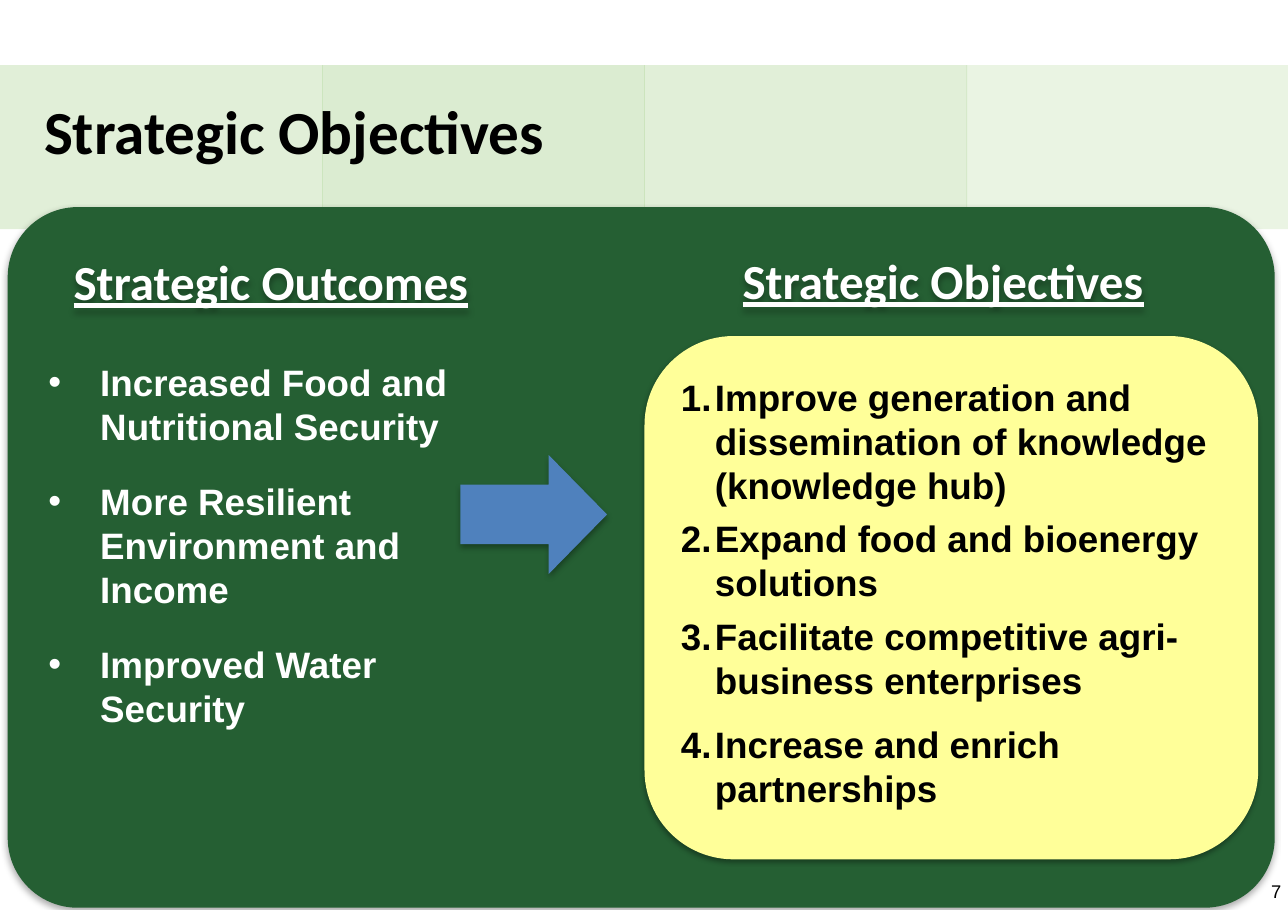
import pptx
import pptx.dml.color
import pptx.enum.shapes
import pptx.enum.text
import pptx.oxml.ns
import pptx.util
from lxml import etree

Inches = pptx.util.Inches
Pt = pptx.util.Pt
Shapes = pptx.enum.shapes.MSO_SHAPE
Align = pptx.enum.text.PP_ALIGN
Anchor = pptx.enum.text.MSO_ANCHOR
qn = pptx.oxml.ns.qn


def color(value):
    return pptx.dml.color.RGBColor.from_string(value)


def child(parent, tag, **attributes):
    return etree.SubElement(parent, qn(tag), {key: str(value) for key, value in attributes.items()})


def write(para, text, size=24, font="Arial", ink="000000", bold=True, underline=False,
          align=Align.LEFT, line=None, before=0, after=0, bullet=None, indent=0):
    para.alignment = align
    para.line_spacing = line
    para.space_before = Pt(before)
    para.space_after = Pt(after)
    if bullet:
        properties = para._p.get_or_add_pPr()
        properties.set("marL", str(Inches(indent)))
        properties.set("indent", str(-Inches(indent)))
        child(child(properties, "a:buClr"), "a:srgbClr", val=ink)
        child(properties, "a:buFont", typeface=font)
        if bullet == "number":
            child(properties, "a:buAutoNum", type="arabicPeriod")
        else:
            child(properties, "a:buChar", char=bullet)
    span = para.add_run()
    span.text = text
    span.font.size = Pt(size)
    span.font.name = font
    span.font.bold = bold
    span.font.underline = underline
    span.font.color.rgb = color(ink)


class Page:
    """Draw the elements of one slide in a shared style."""

    green, pale_green, yellow, blue, white = "255F33", "6CB33F", "FFFF99", "4F81BD", "FFFFFF"

    def __init__(self, deck):
        self.shapes = deck.slides.add_slide(deck.slide_layouts[6]).shapes

    def shadow(self, shape, opacity=32, blur=4, distance=2.2):
        shape.shadow.inherit = False
        effects = shape.element.spPr.find(qn("a:effectLst"))
        outer = child(effects, "a:outerShdw", blurRad=Pt(blur), dist=Pt(distance),
                      dir=5400000, rotWithShape=0)
        tint = child(outer, "a:srgbClr", val="000000")
        child(tint, "a:alpha", val=opacity * 1000)

    def shape(self, kind, place, fill, adjust=(), opacity=None):
        shape = self.shapes.add_shape(kind, *map(Inches, place))
        shape.shadow.inherit = False
        shape.fill.solid()
        shape.fill.fore_color.rgb = color(fill)
        shape.line.fill.background()
        for index, value in enumerate(adjust):
            shape.adjustments[index] = value
        if opacity:
            tint = shape.element.spPr.find(qn("a:solidFill")).find(qn("a:srgbClr"))
            child(tint, "a:alpha", val=opacity * 1000)
        return shape

    def text(self, place, lines, inset=0.05, anchor=Anchor.TOP, gaps=None, **style):
        box = self.shapes.add_textbox(*map(Inches, place))
        frame = box.text_frame
        frame.word_wrap = True
        frame.vertical_anchor = anchor
        frame.margin_left = frame.margin_right = Inches(inset)
        frame.margin_top = frame.margin_bottom = Inches(inset)
        for index, line in enumerate(lines):
            para = frame.add_paragraph() if index else frame.paragraphs[0]
            write(para, line, before=gaps[index] if gaps else 0, **style)
        return box

    def heading(self, place, title):
        box = self.text(place, [title], inset=0, size=32, font="Calibri", ink=self.white,
                        underline=True, align=Align.CENTER, line=0.8)
        self.shadow(box)


def main():
    deck = pptx.Presentation()
    deck.slide_width = Inches(11.69)
    deck.slide_height = Inches(8.26)
    page = Page(deck)

    for column, opacity in enumerate((20, 24, 20, 14)):
        page.shape(Shapes.RECTANGLE, (column * 2.924, 0.59, 2.93, 1.49),
                   page.pale_green, opacity=opacity)
    page.text((8.95, 7.94, 2.73, 0.39), ["7"], size=12, bold=False, align=Align.RIGHT)
    page.text((0.35, 0.8, 4.73, 0.78), ["Strategic Objectives"], size=40, font="Calibri")

    panel = page.shape(Shapes.ROUNDED_RECTANGLE, (0.07, 1.88, 11.5, 6.36), page.green, [0.1])
    page.shadow(panel)
    arrow = page.shape(Shapes.RIGHT_ARROW, (4.18, 4.13, 1.33, 1.08), page.blue, [0.5, 0.49])
    page.shadow(arrow)

    page.heading((0.43, 2.39, 4.06, 0.43), "Strategic Outcomes")
    page.text((0.39, 3.22, 4.46, 3.49), [
        "Increased Food and Nutritional Security",
        "More Resilient Environment and Income",
        "Improved Water Security",
    ], gaps=(0, 10, 10), after=10, ink=page.white, bullet="•", indent=0.47)

    card = page.shape(Shapes.ROUNDED_RECTANGLE, (5.85, 3.05, 5.57, 4.75), page.yellow, [0.17])
    page.shadow(card, opacity=35, blur=3, distance=1.8)
    page.text((6.18, 3.38, 5.06, 3.99), [
        "Improve generation and dissemination of knowledge (knowledge hub)",
        "Expand food and bioenergy solutions",
        "Facilitate competitive agri-business enterprises",
        "Increase and enrich partnerships",
    ], inset=0, anchor=Anchor.MIDDLE, gaps=(0, 6, 6, 13), bullet="number", indent=0.31)
    page.heading((6.53, 2.38, 4.06, 0.44), "Strategic Objectives")

    deck.save("out.pptx")


if __name__ == "__main__":
    main()
